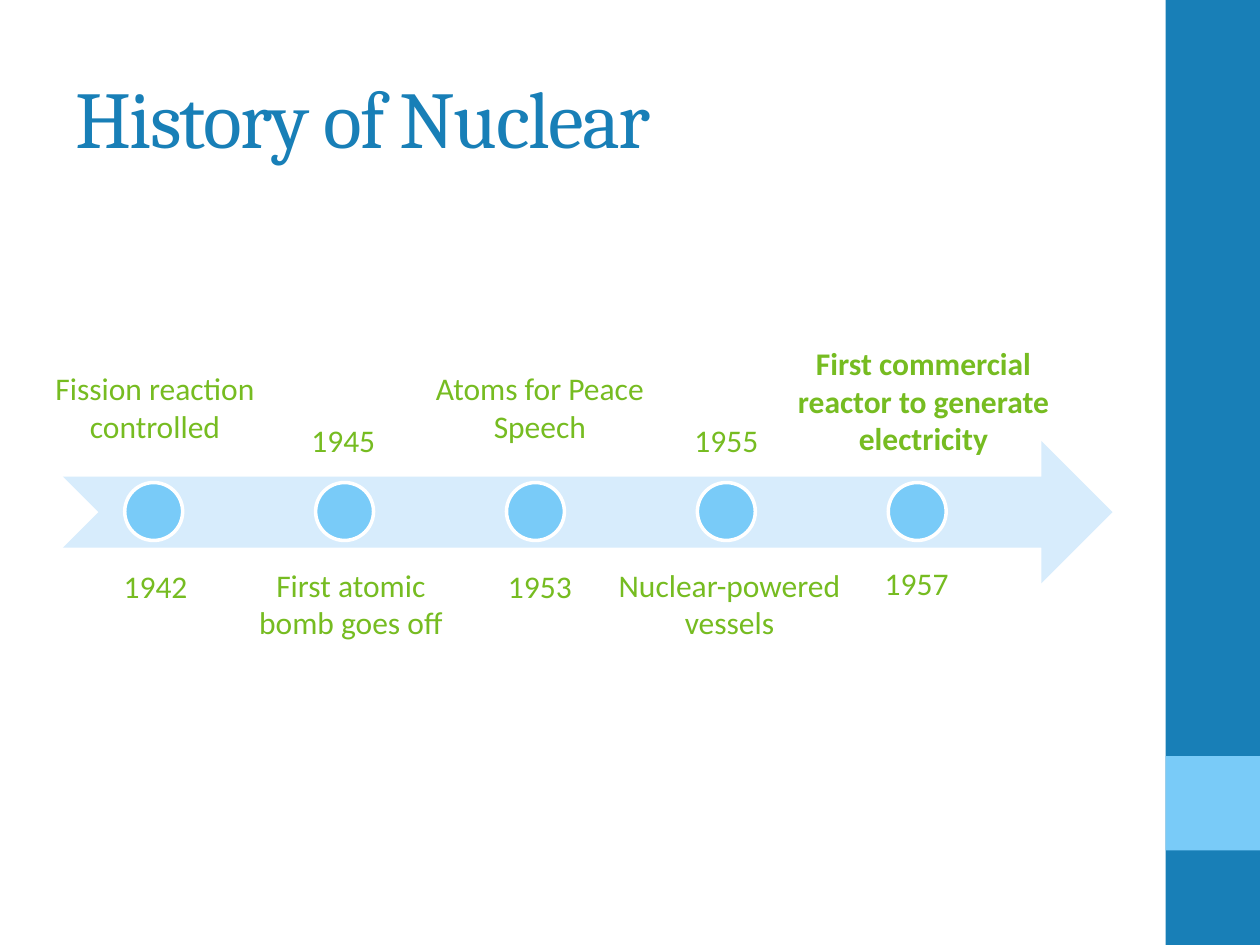
from pptx import Presentation
from pptx.dml.color import RGBColor
from pptx.enum.shapes import MSO_SHAPE
from pptx.enum.text import MSO_ANCHOR, PP_ALIGN
from pptx.util import Inches, Pt

RECTANGLE = MSO_SHAPE.RECTANGLE
ELLIPSE = MSO_SHAPE.OVAL
NOTCHED_ARROW = MSO_SHAPE.NOTCHED_RIGHT_ARROW
MIDDLE = MSO_ANCHOR.MIDDLE
TOP = MSO_ANCHOR.TOP
LEFT = PP_ALIGN.LEFT
CENTER = PP_ALIGN.CENTER

BLUE = RGBColor(0x18, 0x7F, 0xB7)
LIGHT_BLUE = RGBColor(0x79, 0xCB, 0xF8)
PALE_BLUE = RGBColor(0xD7, 0xEC, 0xFC)
GREEN = RGBColor(0x76, 0xBC, 0x21)
WHITE = RGBColor(0xFF, 0xFF, 0xFF)

FIRST_MARKER_LEFT = 0.99
MARKER_STEP = 1.515
MARKER_SIZE = 0.46

# text, left, top, width, height, bold
LABELS = [
    ("1942", 0.83, 4.45, 0.81, 0.4, False),
    ("1945", 2.32, 3.29, 0.81, 0.4, False),
    ("1953", 3.88, 4.45, 0.81, 0.4, False),
    ("1955", 5.36, 3.29, 0.81, 0.4, False),
    ("1957", 6.87, 4.43, 0.81, 0.4, False),
    ("Fission reaction\vcontrolled", -0.11, 2.88, 2.68, 0.71, False),
    ("First atomic bomb goes off", 1.82, 4.44, 1.93, 0.71, False),
    ("Atoms for Peace Speech", 3.32, 2.88, 1.93, 0.71, False),
    ("Nuclear-powered\nvessels", 4.77, 4.44, 2.04, 0.71, False),
    ("First commercial reactor to generate electricity",
     6.18, 2.68, 2.3, 1.01, True),
]


def add_filled_shape(slide, kind, left, top, width, height, color):
    shape = slide.shapes.add_shape(
        kind, Inches(left), Inches(top), Inches(width), Inches(height))
    shape.shadow.inherit = False
    shape.fill.solid()
    shape.fill.fore_color.rgb = color
    shape.line.fill.background()
    return shape


def add_text(slide, text, left, top, width, height, font_name, size, color,
             alignment=CENTER, anchor=TOP, bold=False):
    box = slide.shapes.add_textbox(
        Inches(left), Inches(top), Inches(width), Inches(height))
    frame = box.text_frame
    frame.word_wrap = True
    frame.vertical_anchor = anchor
    frame.text = text
    for paragraph in frame.paragraphs:
        paragraph.alignment = alignment
        paragraph.font.name = font_name
        paragraph.font.size = Pt(size)
        paragraph.font.bold = bold
        paragraph.font.color.rgb = color
    return box


def add_title(slide):
    """Add the heading with its letters set 1 pt closer."""
    title = add_text(slide, "History of Nuclear", 0.5, 0.3, 8.33, 1.25,
                     "Cambria", 46, BLUE, LEFT, MIDDLE)
    run = title.text_frame.paragraphs[0].runs[0]
    run._r.get_or_add_rPr().set("spc", "-100")


def add_side_band(slide):
    add_filled_shape(slide, RECTANGLE, 9.25, 0, 0.75, 7.5, BLUE)
    add_filled_shape(slide, RECTANGLE, 9.25, 6, 0.75, 0.75, LIGHT_BLUE)


def add_timeline(slide):
    add_filled_shape(slide, NOTCHED_ARROW, 0.5, 3.5, 8.33, 1.13, PALE_BLUE)
    for index in range(5):
        marker = add_filled_shape(
            slide, ELLIPSE, FIRST_MARKER_LEFT + index * MARKER_STEP, 3.83,
            MARKER_SIZE, MARKER_SIZE, LIGHT_BLUE)
        marker.line.color.rgb = WHITE
        marker.line.width = Pt(2)
    for text, left, top, width, height, bold in LABELS:
        add_text(slide, text, left, top, width, height,
                 "Calibri", 18, GREEN, bold=bold)


def main():
    presentation = Presentation()
    presentation.slide_width = Inches(10)
    presentation.slide_height = Inches(7.5)
    slide = presentation.slides.add_slide(presentation.slide_layouts[6])
    add_side_band(slide)
    add_title(slide)
    add_timeline(slide)
    presentation.save("out.pptx")


if __name__ == "__main__":
    main()
